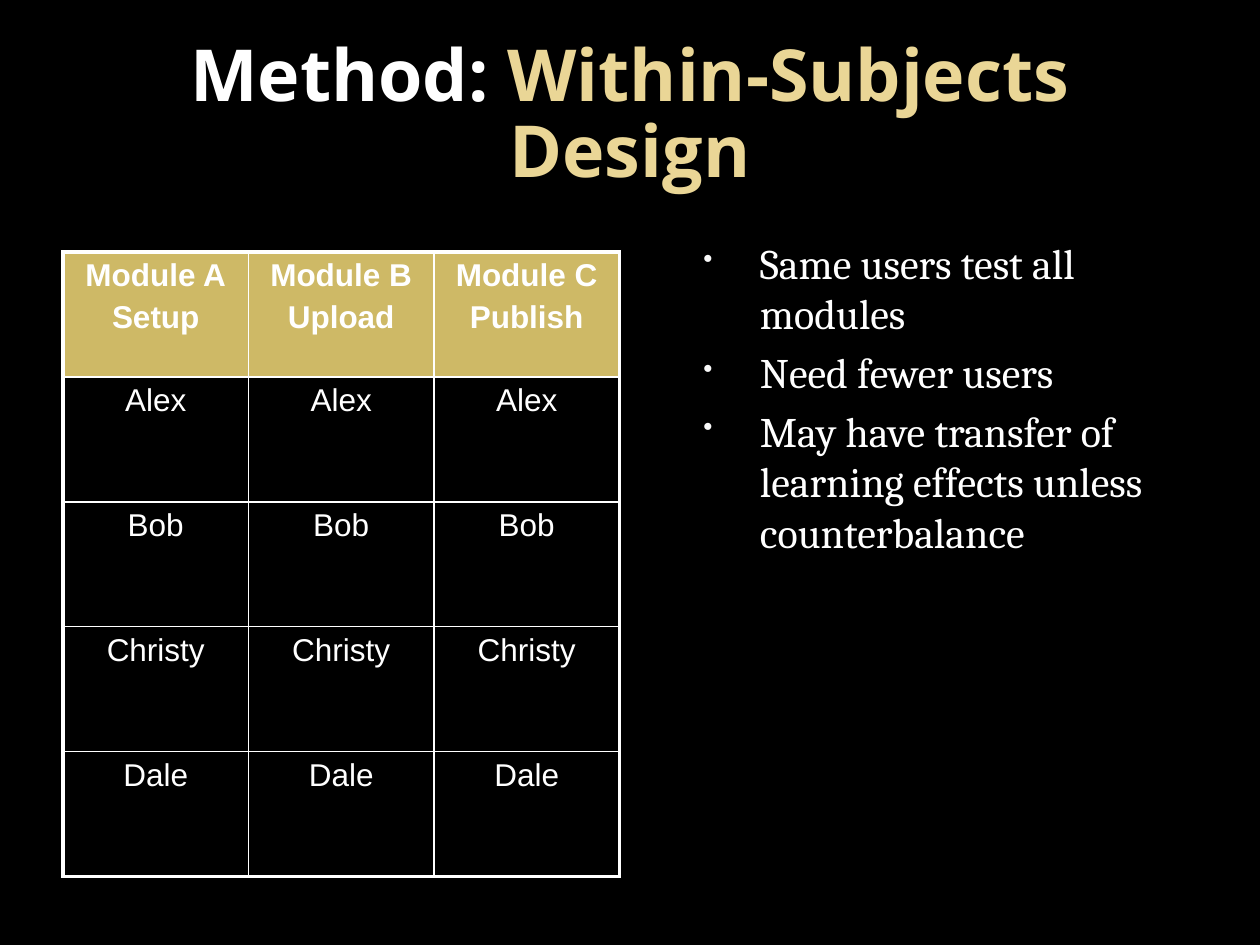
import dataclasses

import pptx
import pptx.dml.color
import pptx.enum.text
import pptx.oxml
import pptx.oxml.ns
import pptx.util
from lxml import etree

Pt = pptx.util.Pt
RGB = pptx.dml.color.RGBColor
Align = pptx.enum.text.PP_ALIGN
Anchor = pptx.enum.text.MSO_ANCHOR
Fit = pptx.enum.text.MSO_AUTO_SIZE
qn = pptx.oxml.ns.qn

BLACK = RGB(0x00, 0x00, 0x00)
WHITE = RGB(0xFF, 0xFF, 0xFF)
SAND = RGB(0xEA, 0xD6, 0x96)
GOLD = RGB(0xCE, 0xB9, 0x66)
PALE = RGB(0xF9, 0xF9, 0xF9)

THIN, THICK = 1, 2.25


@dataclasses.dataclass
class Box:
    left: float
    top: float
    width: float
    height: float

    def place(self) -> tuple:
        return Pt(self.left), Pt(self.top), Pt(self.width), Pt(self.height)


TITLE = Box(36, 21.6, 648, 90)
GRID = Box(36, 144, 318, 357)
LIST = Box(384, 132, 318, 356)

HEADS = ["Module A\nSetup", "Module B\nUpload", "Module C\nPublish"]
USERS = ["Alex", "Bob", "Christy", "Dale"]
POINTS = [
    "Same users test all modules",
    "Need fewer users",
    "May have transfer of learning effects unless counterbalance",
]


def style(par, face: str, size: float, bold: bool = False) -> None:
    font = par.font
    font.name, font.size, font.bold = face, Pt(size), bold
    font.color.rgb = WHITE


def add_title(slide) -> None:
    title = slide.shapes.title
    title.left, title.top, title.width, title.height = TITLE.place()
    frame = title.text_frame
    frame.word_wrap = True
    frame.auto_size = Fit.NONE
    frame.vertical_anchor = Anchor.MIDDLE
    par = frame.paragraphs[0]
    par.alignment = Align.CENTER
    par.line_spacing = 0.88
    style(par, "Open Sans", 41, True)
    par.add_run().text = "Method: "
    run = par.add_run()
    run.text = "Within-Subjects Design"
    run.font.color.rgb = SAND


def add_edge(cell, side: str, width: float) -> None:
    line = etree.SubElement(cell._tc.get_or_add_tcPr(), qn(f"a:ln{side}"),
                            w=str(Pt(width)))
    fill = etree.SubElement(line, qn("a:solidFill"))
    etree.SubElement(fill, qn("a:srgbClr"), val=str(WHITE))


def add_grid(slide) -> None:
    rows = [HEADS] + [[user] * len(HEADS) for user in USERS]
    high, wide = len(rows), len(HEADS)
    table = slide.shapes.add_table(high, wide, *GRID.place()).table
    table.horz_banding = False
    for col in table.columns:
        col.width = Pt(GRID.width / wide)
    for row in table.rows:
        row.height = Pt(GRID.height / high)

    for y, texts in enumerate(rows):
        for x, text in enumerate(texts):
            cell = table.cell(y, x)
            cell.text = text
            for par in cell.text_frame.paragraphs:
                par.alignment = Align.CENTER
                par.space_before = Pt(3.6)
                style(par, "Arial", 18, y == 0)
            # Thick lines on the outer edge only
            outer = {"L": x == 0, "R": x == wide - 1,
                     "T": y == 0, "B": y == high - 1}
            for side, thick in outer.items():
                add_edge(cell, side, THICK if thick else THIN)
            if y == 0:
                cell.fill.solid()
                cell.fill.fore_color.rgb = GOLD
            else:
                cell.fill.background()


def add_mark(par) -> None:
    props = par._p.get_or_add_pPr()
    props.set("marL", str(Pt(43.2)))
    props.set("indent", str(Pt(-32.4)))
    tint = etree.SubElement(props, qn("a:buClr"))
    etree.SubElement(tint, qn("a:srgbClr"), val=str(PALE))
    etree.SubElement(props, qn("a:buSzPct"), val="65000")
    etree.SubElement(props, qn("a:buChar"), char="•")


def add_list(slide) -> None:
    frame = slide.shapes.add_textbox(*LIST.place()).text_frame
    frame.word_wrap = True
    frame.text = "\n".join(POINTS)
    for par in frame.paragraphs:
        par.space_before = Pt(4.8)
        add_mark(par)
        style(par, "Cambria", 24)


def main() -> None:
    deck = pptx.Presentation()
    deck.slide_width, deck.slide_height = Pt(720), Pt(540)
    slide = deck.slides.add_slide(deck.slide_layouts[5])
    slide.background.fill.solid()
    slide.background.fill.fore_color.rgb = BLACK

    add_title(slide)
    add_list(slide)
    add_grid(slide)
    deck.save("out.pptx")


if __name__ == "__main__":
    main()
